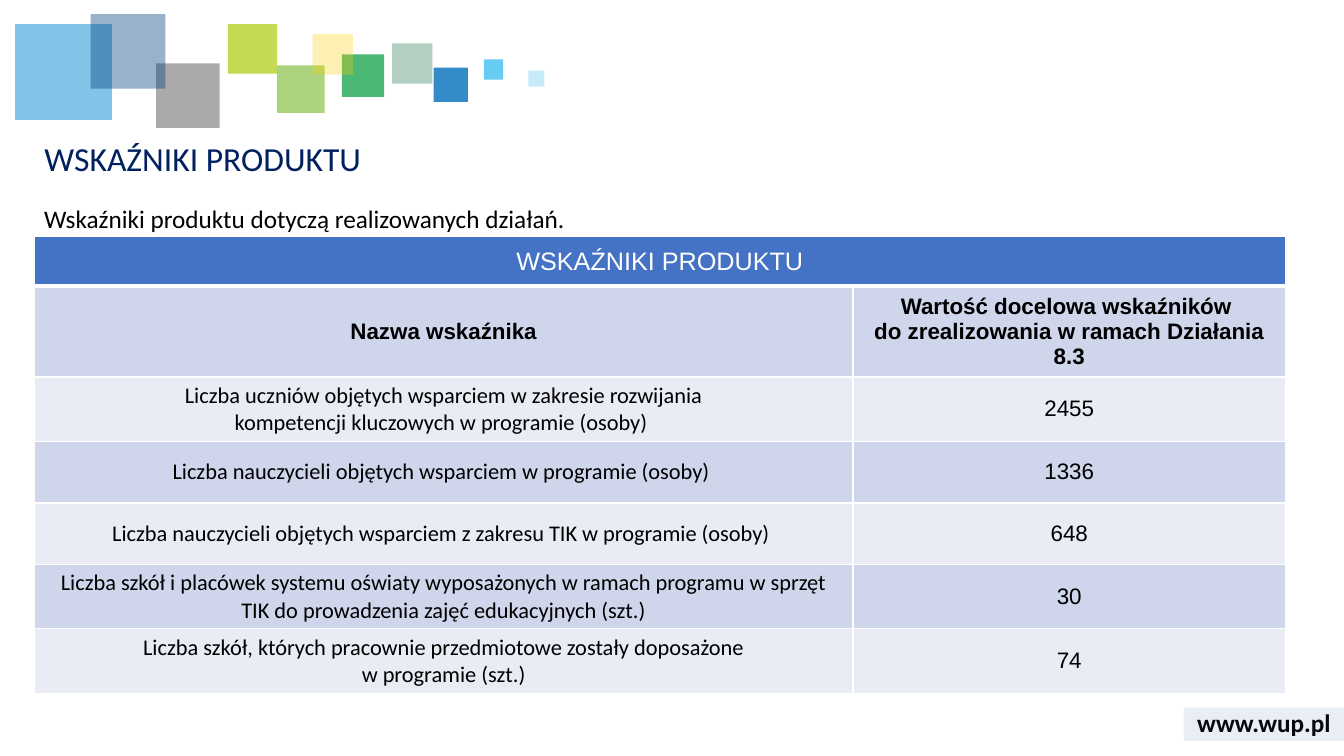
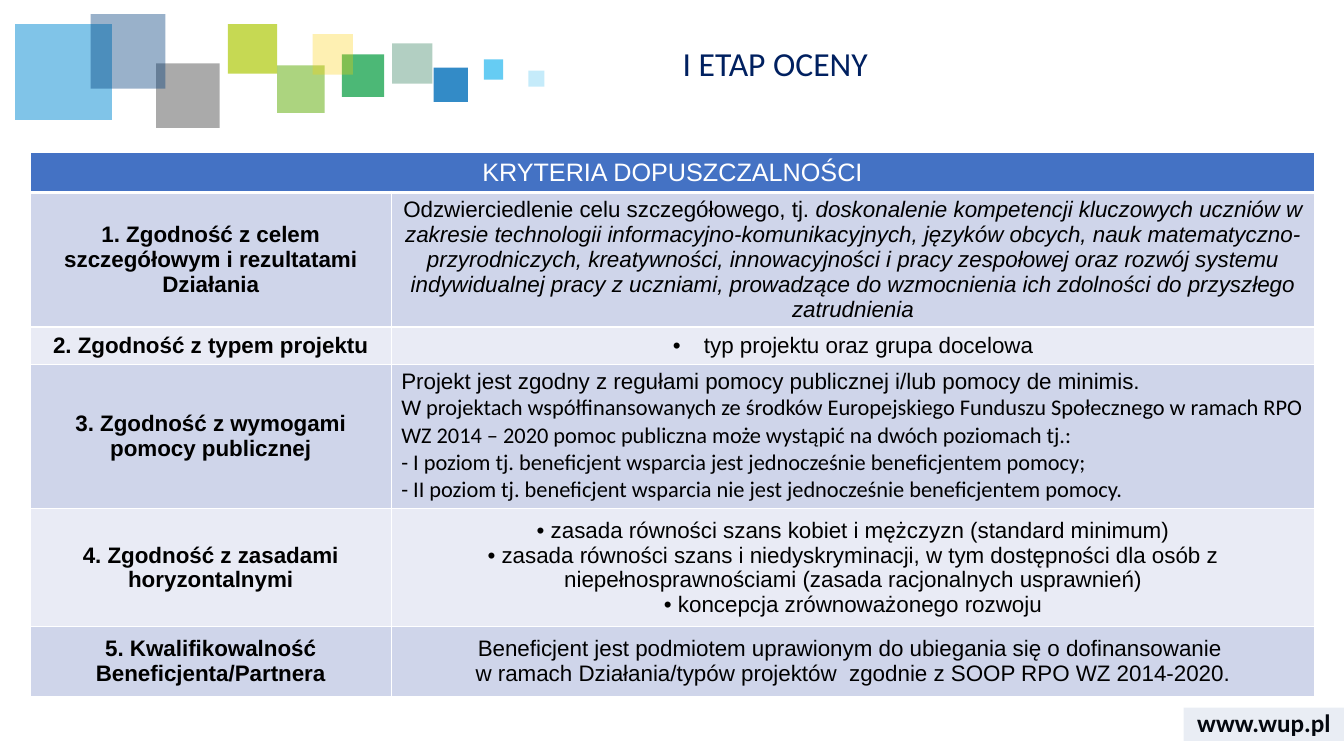
from dataclasses import dataclass

from lxml import etree
from pptx import Presentation
from pptx.dml.color import RGBColor
from pptx.enum.shapes import MSO_SHAPE
from pptx.enum.text import MSO_ANCHOR, MSO_AUTO_SIZE, PP_ALIGN
from pptx.oxml.ns import qn
from pptx.util import Inches, Pt

RECTANGLE = MSO_SHAPE.RECTANGLE
TOP, MIDDLE = MSO_ANCHOR.TOP, MSO_ANCHOR.MIDDLE
LEFT, CENTER = PP_ALIGN.LEFT, PP_ALIGN.CENTER
NO_AUTOFIT = MSO_AUTO_SIZE.NONE


@dataclass(frozen=True)
class Theme:
    title: str = "002060"
    text: str = "000000"
    white: str = "FFFFFF"
    header: str = "4472C4"
    stripes: tuple = ("CFD5EA", "E9EBF5")
    title_size: int = 24
    lead_size: int = 18
    cell_size: int = 16
    heading_font: str = "Calibri"
    table_font: str = "Arial"


@dataclass
class Cell:
    """Paragraphs are lists of (text, style) spans; hanging is the bullet indent."""
    paragraphs: list
    align: int = CENTER
    hanging: float | None = None


THEME = Theme()
PLAIN = {"name": THEME.table_font, "bold": False}
BOLD = {"name": THEME.table_font, "bold": True}
ITALIC = {"name": THEME.table_font, "bold": False, "italic": True}
HEADING = {"name": THEME.heading_font, "bold": False}
HEADING_BOLD = {"name": THEME.heading_font, "bold": True}


def write(para, spans, size, color, align=LEFT):
    """Fill a paragraph with styled spans; a vertical tab breaks the line."""
    para.alignment = align
    for text, style in spans:
        first_new = len(para.runs)
        if first_new:
            para.add_run().text = text
        else:
            para.text = text
        for run in para.runs[first_new:]:
            run.font.size = Pt(size)
            run.font.color.rgb = RGBColor.from_string(color)
            for name, value in style.items():
                setattr(run.font, name, value)
    for line_break in para._p.findall(qn("a:br")):
        etree.SubElement(line_break, qn("a:rPr"), sz=str(size * 100))


def add_grid(page, left, top, widths, heights, heading, rows):
    """Add a striped table with one merged heading row."""
    table = page.shapes.add_table(
        len(heights), len(widths), Inches(left), Inches(top),
        Inches(sum(widths)), Inches(sum(heights))).table
    for column, width in zip(table.columns, widths):
        column.width = Inches(width)
    for row, height in zip(table.rows, heights):
        row.height = Inches(height)
    table.cell(0, 0).merge(table.cell(0, len(widths) - 1))

    heading_row = [Cell([[(heading, PLAIN)]])]
    for row_index, row in enumerate([heading_row] + rows):
        is_heading = row_index == 0
        fill = THEME.header if is_heading else THEME.stripes[(row_index - 1) % 2]
        size = THEME.lead_size if is_heading else THEME.cell_size
        color = THEME.white if is_heading else THEME.text
        for column_index, content in enumerate(row):
            cell = table.cell(row_index, column_index)
            cell.vertical_anchor = MIDDLE
            properties = cell._tc.get_or_add_tcPr()
            for side in ("L", "R", "T", "B"):
                points = 3 if is_heading and side == "B" else 1
                border = etree.SubElement(
                    properties, qn(f"a:ln{side}"), w=str(Pt(points)))
                solid = etree.SubElement(border, qn("a:solidFill"))
                etree.SubElement(solid, qn("a:srgbClr"), val=THEME.white)
            cell.fill.solid()
            cell.fill.fore_color.rgb = RGBColor.from_string(fill)
            frame = cell.text_frame
            for index, spans in enumerate(content.paragraphs):
                para = frame.add_paragraph() if index else frame.paragraphs[0]
                if content.hanging is not None:
                    indent = Inches(content.hanging)
                    layout_properties = para._p.get_or_add_pPr()
                    layout_properties.set("marL", str(indent))
                    layout_properties.set("indent", str(-indent))
                    etree.SubElement(layout_properties, qn("a:buFont"), typeface="Arial")
                    etree.SubElement(layout_properties, qn("a:buChar"), char="•")
                write(para, spans, size, color, content.align)


deck = Presentation()
deck.slide_width, deck.slide_height = Inches(13.33), Inches(7.5)
layout = deck.slide_layouts[5]
for placeholder in list(layout.placeholders)[1:]:
    placeholder.element.getparent().remove(placeholder.element)

# Titles
TITLES = [
    ("WSKAŹNIKI PRODUKTU", 0.34, 1.36, 12.41),
    ("I ETAP OCENY", 6.67, 0.42, 6.36),
]
pages = []
for text, left, top, width in TITLES:
    page = deck.slides.add_slide(layout)
    title = page.shapes.title
    title.left, title.top = Inches(left), Inches(top)
    title.width, title.height = Inches(width), Inches(0.55)
    frame = title.text_frame
    frame.auto_size = NO_AUTOFIT
    frame.vertical_anchor = TOP
    write(frame.paragraphs[0], [(text, HEADING)], THEME.title_size, THEME.title)
    frame.paragraphs[0].line_spacing = 0.9
    pages.append(page)
indicators_page, criteria_page = pages

# Shared decoration, moved to the layout: left, top, width, height, colour, opacity
TILES = [
    (3.89, 0.43, 0.4, 0.4, "006138", 30),
    (4.3, 0.67, 0.34, 0.34, "006EB9", 80),
    (3.39, 0.54, 0.42, 0.42, "009A3C", 70),
    (0.15, 0.24, 0.96, 0.95, "028BD3", 50),
    (2.75, 0.65, 0.47, 0.47, "75B82A", 60),
    (1.55, 0.63, 0.63, 0.64, "575757", 50),
    (0.9, 0.14, 0.74, 0.74, "003D7C", 40),
    (4.8, 0.59, 0.19, 0.2, "40C0F1", 80),
    (2.26, 0.24, 0.49, 0.49, "AFCA0B", 70),
    (3.1, 0.34, 0.4, 0.4, "FED000", 30),
    (5.24, 0.7, 0.16, 0.16, "40C0F1", 30),
    (11.74, 7.02, 1.59, 0.33, "2F5597", 10),
]
footer = indicators_page.shapes.add_textbox(
    Inches(11.74), Inches(6.97), Inches(1.59), Inches(0.4))
footer.text_frame.word_wrap = True
footer.text_frame.vertical_anchor = MIDDLE
write(footer.text_frame.paragraphs[0], [("www.wup.pl", HEADING_BOLD)],
      THEME.lead_size, THEME.text, CENTER)
decoration = [footer]
for left, top, width, height, color, opacity in TILES:
    tile = indicators_page.shapes.add_shape(
        RECTANGLE, Inches(left), Inches(top), Inches(width), Inches(height))
    tile.shadow.inherit = False
    tile.line.fill.background()
    tile.fill.solid()
    tile.fill.fore_color.rgb = RGBColor.from_string(color)
    tone = tile.element.find(".//" + qn("a:srgbClr"))
    etree.SubElement(tone, qn("a:alpha"), val=str(opacity * 1000))
    decoration.append(tile)
for shape in decoration:
    layout.shapes.element.append(shape.element)

# Product indicators
lead = indicators_page.shapes.add_textbox(
    Inches(0.34), Inches(2), Inches(12.41), Inches(0.35))
lead.text_frame.word_wrap = True
lead_para = lead.text_frame.paragraphs[0]
write(lead_para, [("Wskaźniki produktu dotyczą realizowanych działań.", HEADING)],
      THEME.lead_size, THEME.text)
lead_para.line_spacing = 0.9

INDICATORS = [
    (["Liczba uczniów objętych wsparciem w zakresie rozwijania",
      "kompetencji kluczowych w programie (osoby) "], "2455"),
    (["Liczba nauczycieli objętych wsparciem w programie (osoby) "], "1336"),
    (["Liczba nauczycieli objętych wsparciem z zakresu TIK w programie (osoby) "], "648"),
    (["Liczba szkół i placówek systemu oświaty wyposażonych w ramach programu "
      "w sprzęt TIK do prowadzenia zajęć edukacyjnych (szt.)"], "30"),
    (["Liczba szkół, których pracownie przedmiotowe zostały doposażone",
      "w programie (szt.)"], "74"),
]
indicator_rows = [[
    Cell([[("Nazwa wskaźnika", BOLD)]]),
    Cell([[("Wartość docelowa wskaźników \vdo zrealizowania w ramach Działania 8.3", BOLD)]]),
]]
for names, target in INDICATORS:
    indicator_rows.append([
        Cell([[(name, HEADING)] for name in names]),
        Cell([[(target, PLAIN)]]),
    ])
add_grid(indicators_page, 0.34, 2.35, [8.12, 4.29],
         [0.49, 0.66, 0.64, 0.61, 0.61, 0.64, 0.64],
         "WSKAŹNIKI PRODUKTU", indicator_rows)

# Admissibility criteria
CRITERIA = [
    ("1. Zgodność z celem szczegółowym i rezultatami Działania", Cell([[
        ("Odzwierciedlenie celu szczegółowego, tj. ", PLAIN),
        ("doskonalenie kompetencji kluczowych uczniów w zakresie technologii "
         "informacyjno-komunikacyjnych, języków obcych, nauk "
         "matematyczno-przyrodniczych, kreatywności, innowacyjności i pracy "
         "zespołowej oraz rozwój systemu indywidualnej pracy z uczniami, "
         "prowadzące do wzmocnienia ich zdolności do przyszłego zatrudnienia", ITALIC),
    ]])),
    ("2. Zgodność z typem projektu", Cell(
        [[("typ projektu oraz grupa docelowa", PLAIN)]], hanging=0.31)),
    ("3. Zgodność z wymogami pomocy publicznej", Cell([
        [("Projekt jest zgodny z regułami pomocy publicznej i/lub pomocy "
          "de minimis. \v", PLAIN),
         ("W projektach współfinansowanych ze środków Europejskiego Funduszu "
          "Społecznego w ramach RPO WZ 2014 – 2020 pomoc publiczna może wystąpić "
          "na dwóch poziomach tj.:", HEADING)],
        [("- I poziom tj. beneficjent wsparcia jest jednocześnie "
          "beneficjentem pomocy;", HEADING)],
        [("- II poziom tj. beneficjent wsparcia nie jest jednocześnie "
          "beneficjentem pomocy.", HEADING)],
    ], align=LEFT)),
    ("4. Zgodność z zasadami horyzontalnymi", Cell([
        [(" zasada równości szans kobiet i mężczyzn (standard minimum)", PLAIN)],
        [(" zasada równości szans i niedyskryminacji, w tym dostępności dla osób "
          "z niepełnosprawnościami (zasada racjonalnych usprawnień)", PLAIN)],
        [(" koncepcja zrównoważonego rozwoju", PLAIN)],
    ], hanging=0)),
    ("5. Kwalifikowalność Beneficjenta/Partnera", Cell([[
        ("Beneficjent jest podmiotem uprawionym do ubiegania się o dofinansowanie \v"
         "w ramach Działania/typów projektów  zgodnie z SOOP RPO WZ 2014-2020.", PLAIN),
    ]])),
]
criteria_rows = [[Cell([[(name, BOLD)]]), details] for name, details in CRITERIA]
add_grid(criteria_page, 0.3, 1.51, [3.58, 9.16],
         [0.4, 1.17, 0.37, 1.43, 1.17, 0.69],
         "KRYTERIA DOPUSZCZALNOŚCI", criteria_rows)

deck.save("out.pptx")
